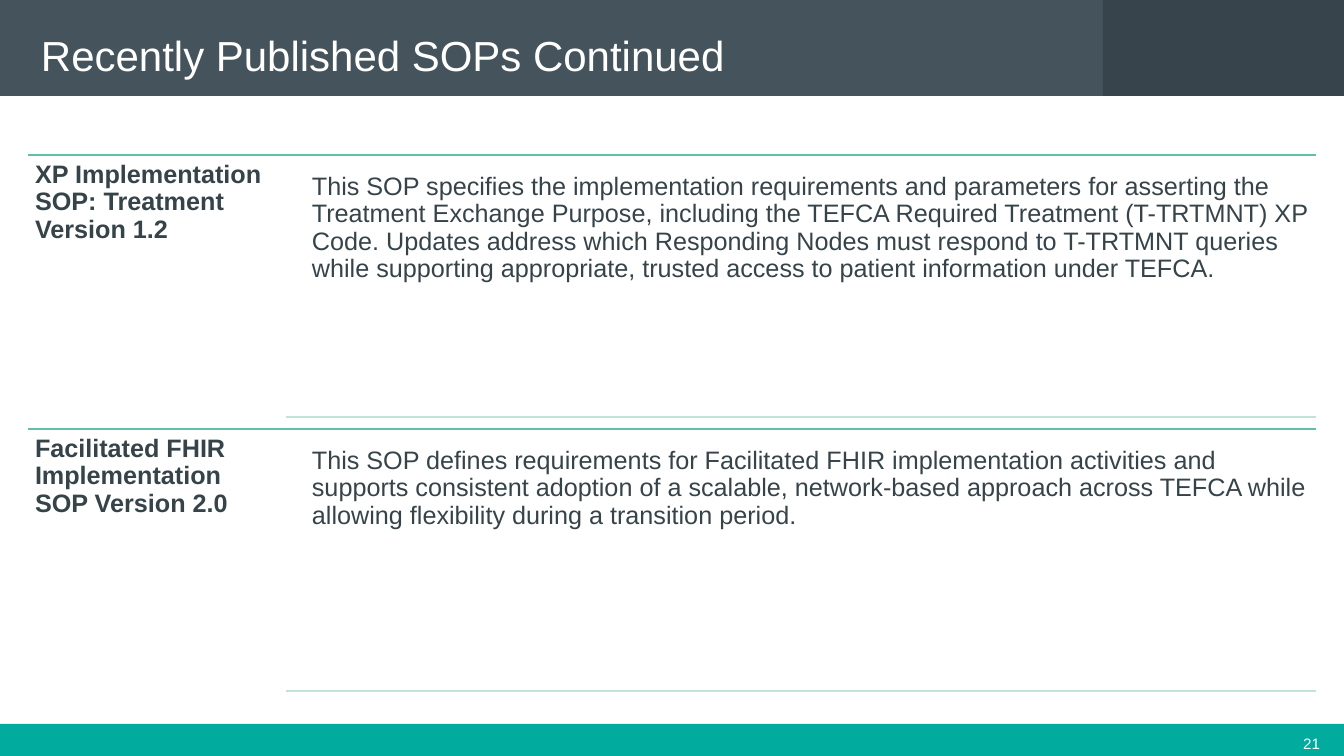
from lxml import etree
from pptx import Presentation
from pptx import util as u
from pptx.dml.color import RGBColor
from pptx.enum import shapes, text
from pptx.oxml.ns import qn

WIDTH, HEIGHT = 1344, 756
COLORS = {
    "header": "45535C",
    "corner": "37444B",
    "footer": "01AB9E",
    "rule": "61BEA9",
    "pale_rule": "C5E2DA",
    "body": "36444A",
    "white": "FFFFFF",
    "title": "FFFFFE",
}
SOPS = [
    ("XP Implementation SOP: Treatment Version 1.2",
     "This SOP specifies the implementation requirements and parameters for asserting the "
     "Treatment Exchange Purpose, including the TEFCA Required Treatment (T-TRTMNT) XP Code. "
     "Updates address which Responding Nodes must respond to T-TRTMNT queries while supporting "
     "appropriate, trusted access to patient information under TEFCA."),
    ("Facilitated FHIR Implementation SOP Version 2.0",
     "This SOP defines requirements for Facilitated FHIR implementation activities and supports "
     "consistent adoption of a scalable, network-based approach across TEFCA while allowing "
     "flexibility during a transition period."),
]
FIRST_ROW, ROW_HEIGHT = 155, 274
LEFT, RIGHT = 28, 1316


def px(length):
    return u.Emu(round(length * u.Inches(13.3333) / WIDTH))


def color(name):
    return RGBColor.from_string(COLORS[name])


def add_band(slide, left, top, width, height, fill):
    band = slide.shapes.add_shape(shapes.MSO_SHAPE.PENTAGON, *map(px, (left, top, width, height)))
    band.adjustments[0] = 0
    band.shadow.inherit = False
    band.fill.solid()
    band.fill.fore_color.rgb = color(fill)
    band.line.fill.background()


def add_rule(slide, left, right, y, stroke):
    rule = slide.shapes.add_connector(
        shapes.MSO_CONNECTOR.STRAIGHT, *map(px, (left, y, right, y)))
    rule.line.color.rgb = color(stroke)
    rule.line.width = u.Pt(2)
    etree.SubElement(rule._element.spPr, qn("a:effectLst"))


def write(holder, words, size, ink, bold=False, inset=(7, 7), spacing=1.0,
          anchor=text.MSO_ANCHOR.TOP, align=text.PP_ALIGN.LEFT):
    """Fill a text box or placeholder with one formatted paragraph."""
    frame = holder.text_frame
    side, end = map(px, inset)
    frame_format = {
        "word_wrap": True, "auto_size": text.MSO_AUTO_SIZE.NONE, "vertical_anchor": anchor,
        "margin_left": side, "margin_right": side, "margin_top": end, "margin_bottom": end,
    }
    for key, value in frame_format.items():
        setattr(frame, key, value)
    paragraph = frame.paragraphs[0]
    paragraph.alignment = align
    paragraph.line_spacing = spacing
    run = paragraph.add_run()
    run.text = words
    for key, value in {"name": "Arial", "size": u.Pt(size), "bold": bold}.items():
        setattr(run.font, key, value)
    run.font.color.rgb = color(ink)


def add_text(slide, left, top, width, height, words, size, ink, **options):
    box = slide.shapes.add_textbox(*map(px, (left, top, width, height)))
    write(box, words, size, ink, **options)


def set_title(slide, words):
    title = slide.shapes.title
    place = {"left": 29, "top": 14, "width": 1072, "height": 82}
    for key, value in place.items():
        setattr(title, key, px(value))
    write(title, words, 30, "title", inset=(12, 6), anchor=text.MSO_ANCHOR.MIDDLE)
    # Bring the title in front of the header band.
    slide.shapes._spTree.append(title._element)


def add_sop(slide, top, name, summary):
    add_rule(slide, LEFT, RIGHT, top, "rule")
    add_text(slide, LEFT, top, 258, ROW_HEIGHT, name, 18, "body", bold=True, spacing=0.9)
    add_text(slide, 305, top + 12, 1011, 249, summary, 18, "body", spacing=0.9)
    add_rule(slide, 286, RIGHT, top + 262, "pale_rule")


def main():
    deck = Presentation()
    deck.slide_width, deck.slide_height = px(WIDTH), px(HEIGHT)
    slide = deck.slides.add_slide(deck.slide_layouts.get_by_name("Title Only"))

    add_band(slide, 0, 724, WIDTH, 32, "footer")
    add_band(slide, 0, 0, 1103, 96, "header")
    add_band(slide, 1103, 0, WIDTH - 1103, 96, "corner")
    add_text(slide, 1275, 730, 57, 26, "21", 10.8, "white", inset=(12, 6),
             anchor=text.MSO_ANCHOR.MIDDLE, align=text.PP_ALIGN.RIGHT)
    set_title(slide, "Recently Published SOPs Continued")
    for row, (name, summary) in enumerate(SOPS):
        add_sop(slide, FIRST_ROW + row * ROW_HEIGHT, name, summary)

    deck.save("out.pptx")


if __name__ == "__main__":
    main()
